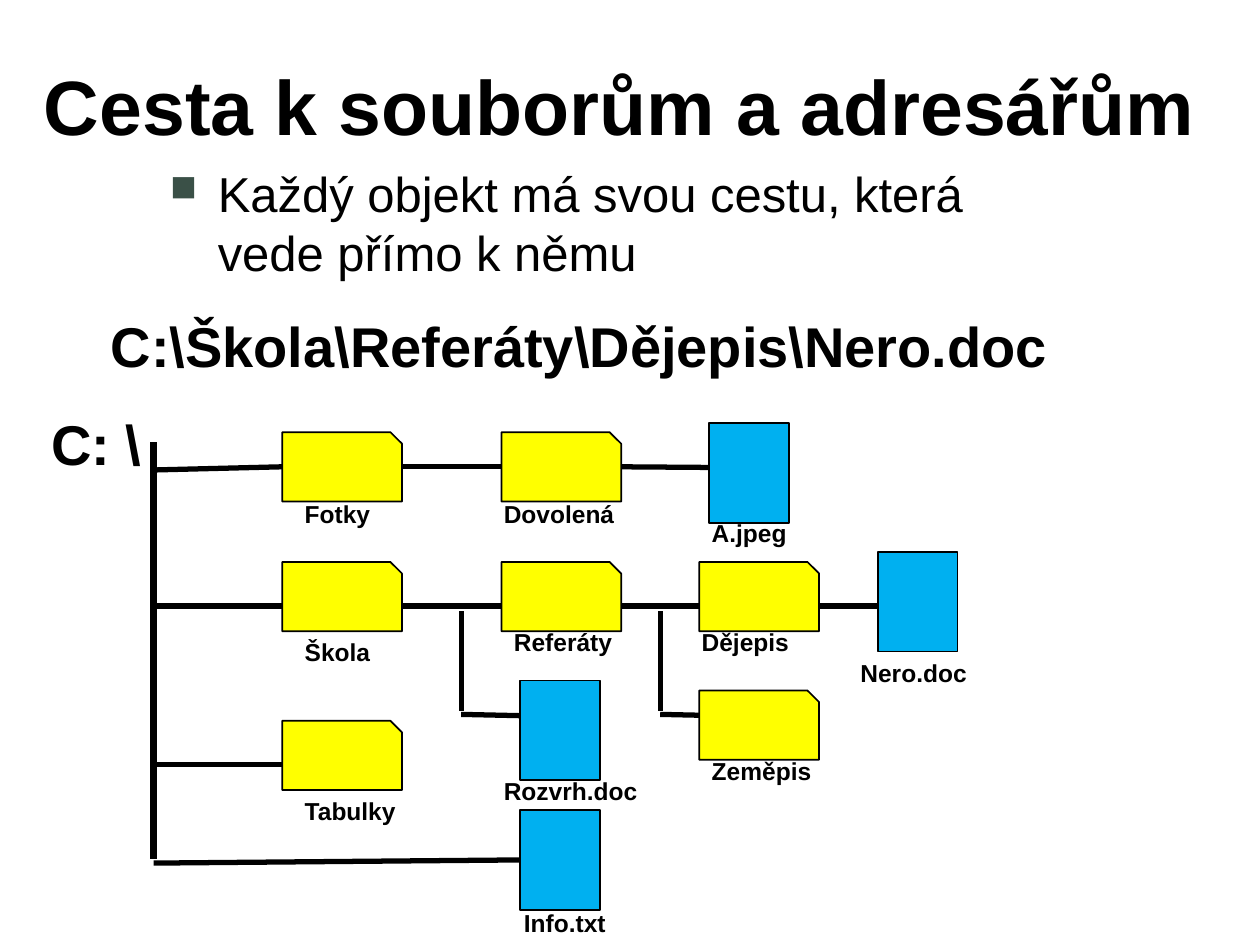
from dataclasses import dataclass

from lxml import etree
from pptx import Presentation
from pptx import util as u
from pptx.dml.color import RGBColor
from pptx.enum import shapes, text
from pptx.oxml.ns import qn

PX = 9144  # 100 px to the inch
LEFT, RIGHT = 1, 3


@dataclass(frozen=True)
class Theme:
    font: str = "Arial"
    ink: str = "000000"
    bullet: str = "3A5047"
    folder: str = "FFFF00"
    file: str = "00B0F0"
    title: int = 44
    body: int = 28
    route: int = 32
    label: int = 14
    edge: int = 1
    link: int = 3
    trunk: int = 4


T = Theme()
FOLDER = (shapes.MSO_SHAPE.SNIP_1_RECTANGLE, 95, 55, T.folder)
FILE = (shapes.MSO_SHAPE.RECTANGLE, 63, 79, T.file)

# name: kind, place in the tree, label offset from the node, label width
NODES = {
    "Fotky": (FOLDER, 193, 23, 8, 48, 79),
    "Dovolená": (FOLDER, 367, 23, -8, 48, 110),
    "A.jpeg": (FILE, 532, 16, -8, 70, 94),
    "Škola": (FOLDER, 193, 126, 8, 55, 79),
    "Referáty": (FOLDER, 367, 126, 0, 47, 102),
    "Dějepis": (FOLDER, 524, 126, -8, 47, 102),
    "Nero.doc": (FILE, 666, 118, -24, 79, 118),
    "Tabulky": (FOLDER, 193, 252, 8, 55, 94),
    "Zeměpis": (FOLDER, 524, 228, 0, 47, 102),
    "Rozvrh.doc": (FILE, 382, 220, -23, 71, 134),
    "Info.txt": (FILE, 382, 323, -7, 73, 102),
}


def px(*nums):
    return [u.Emu(n * PX) for n in nums]


def rgb(code):
    return RGBColor.from_string(code)


def write(slide, box, words, size, bold=True, anchor=text.MSO_ANCHOR.TOP,
          bullet=None, indent=0):
    frame = slide.shapes.add_textbox(*px(*box)).text_frame
    frame.word_wrap = True
    frame.vertical_anchor = anchor
    para = frame.paragraphs[0]
    para.text = words
    if bullet:
        props = para._p.get_or_add_pPr()
        props.set("marL", str(indent * PX))
        props.set("indent", str(-indent * PX))
        tint = etree.SubElement(props, qn("a:buClr"))
        etree.SubElement(tint, qn("a:srgbClr"), val=T.bullet)
        etree.SubElement(props, qn("a:buSzPct"), val="75000")
        etree.SubElement(props, qn("a:buChar"), char=bullet)
    font = para.runs[0].font
    font.name, font.size, font.bold = T.font, u.Pt(size), bold
    font.color.rgb = rgb(T.ink)


def join(slide, origin, start, end, width=T.link):
    """Draw a line; each end is a point in the tree or a (shape, side) pair."""
    ends = []
    for a, b in (start, end):
        glued = not isinstance(a, int)
        ends += [0, 0] if glued else px(origin[0] + a, origin[1] + b)
    line = slide.shapes.add_connector(shapes.MSO_CONNECTOR.STRAIGHT, *ends)
    if not isinstance(start[0], int):
        line.begin_connect(*start)
    if not isinstance(end[0], int):
        line.end_connect(*end)
    line.line.color.rgb = rgb(T.ink)
    line.line.width = u.Pt(width)
    etree.SubElement(line._element.spPr, qn("a:effectLst"))


def node(slide, x, y, kind):
    form, w, h, fill = kind
    item = slide.shapes.add_shape(form, *px(x, y, w, h))
    item.shadow.inherit = False
    item.fill.solid()
    item.fill.fore_color.rgb = rgb(fill)
    item.line.color.rgb = rgb(T.ink)
    item.line.width = u.Pt(T.edge)
    return item


def header(slide, box):
    x, y, w, _ = box
    write(slide, (x, y, w, 133), "Cesta k souborům a adresářům", T.title,
          anchor=text.MSO_ANCHOR.MIDDLE)
    write(slide, (x + 100, y + 108, 739, 129),
          "Každý objekt má svou cestu, která vede přímo k němu",
          T.body, bold=False, bullet="■", indent=38)
    write(slide, (x + 53, y + 225, 773, 64),
          "C:\\Škola\\Referáty\\Dějepis\\Nero.doc", T.route)


def tree(slide, box):
    left, top = origin = box[:2]
    trunk, row = 91, 161
    write(slide, (left, top, 126, 63), "C: \\", T.route)
    join(slide, origin, (trunk, 31), (trunk, 362), T.trunk)
    for x in (trunk, 288, 453, 595):
        join(slide, origin, (x, row), (x + 103, row))
    join(slide, origin, (trunk, 287), (trunk + 103, 287))
    for x in (335, 493):
        join(slide, origin, (x, row + 4), (x, row + 83))
        join(slide, origin, (x, row + 86), (x + 47, row + 87))

    items = {}
    for name, (kind, x, y, dx, dy, w) in NODES.items():
        x, y = left + x, top + y
        items[name] = node(slide, x, y, kind)
        write(slide, (x + dx, y + dy, w, 34), name, T.label)

    photos, trip = items["Fotky"], items["Dovolená"]
    join(slide, origin, (trunk, 53), (photos, LEFT))
    join(slide, origin, (photos, RIGHT), (trip, LEFT))
    join(slide, origin, (trip, RIGHT), (532, 51))
    join(slide, origin, (trunk, 365), (items["Info.txt"], LEFT))


def main():
    deck = Presentation()
    deck.slide_width, deck.slide_height = px(1000, 750)
    slide = deck.slides.add_slide(deck.slide_layouts[6])
    header(slide, (25, 17, 950, 289))
    tree(slide, (31, 320, 760, 430))
    deck.save("out.pptx")


if __name__ == "__main__":
    main()
